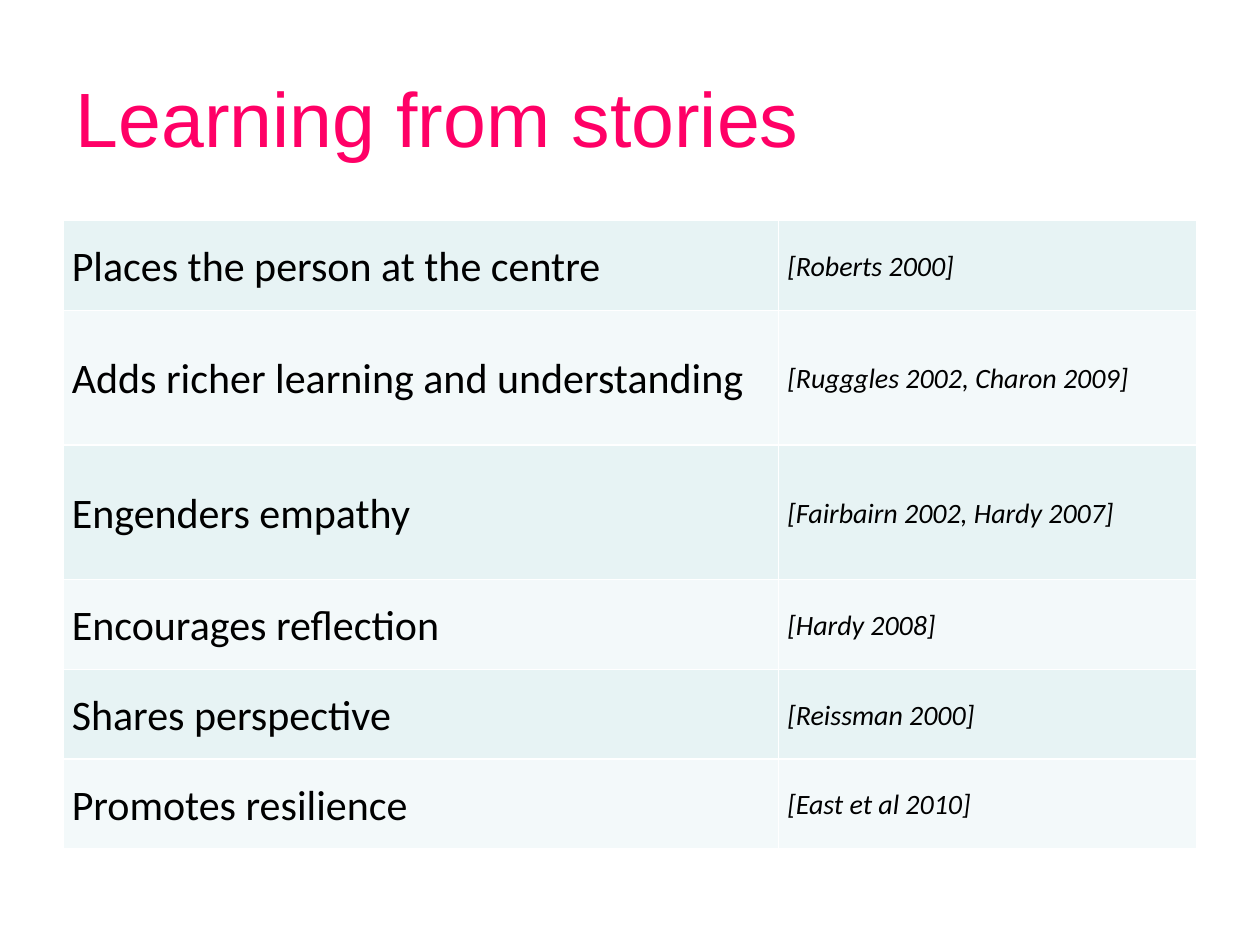
from lxml.etree import SubElement
from pptx import Presentation
from pptx.dml.color import RGBColor
from pptx.enum.text import MSO_ANCHOR, PP_ALIGN
from pptx.oxml.ns import qn
from pptx.util import Inches, Pt


def set_font(p, name, size, color, italic=False):
    p.alignment = PP_ALIGN.LEFT
    p.font.name = name
    p.font.size = Pt(size)
    p.font.bold = False
    p.font.italic = italic
    p.font.color.rgb = RGBColor.from_string(color)


def set_borders(cell, color, width):
    tc_pr = cell._tc.get_or_add_tcPr()
    for side in ("a:lnL", "a:lnR", "a:lnT", "a:lnB"):
        ln = SubElement(tc_pr, qn(side), w=str(Pt(width)))
        SubElement(SubElement(ln, qn("a:solidFill")), qn("a:srgbClr"), val=color)


prs = Presentation()
prs.slide_width, prs.slide_height = Inches(10), Inches(7.5)
W, H = prs.slide_width, prs.slide_height
s = prs.slides.add_slide(prs.slide_layouts[5])
margin, content_w = int(W * 0.05), int(W * 0.9)

title = s.shapes.title
title.left, title.top, title.width, title.height = margin, int(H * 0.04), content_w, Inches(1.25)
tf = title.text_frame
tf.text = "Learning from stories"
tf.vertical_anchor = MSO_ANCHOR.MIDDLE
set_font(tf.paragraphs[0], "Arial", 44, "FF0066")

benefits = [
    ("Places the person at the centre", "[Roberts 2000]", 2),
    ("Adds richer learning and understanding", "[Rugggles 2002, Charon 2009]", 3),
    ("Engenders empathy", "[Fairbairn 2002, Hardy 2007]", 3),
    ("Encourages reflection", "[Hardy 2008]", 2),
    ("Shares perspective", "[Reissman 2000]", 2),
    ("Promotes resilience", "[East et al 2010]", 2),
]
line_h = Inches(4.99) // sum(lines for _, _, lines in benefits)

table = s.shapes.add_table(len(benefits), 2, margin, Inches(1.75), content_w, Inches(4.99)).table
table.first_row = False
table.columns[0].width = Inches(5.68)
table.columns[1].width = content_w - Inches(5.68)

for i, (benefit, reference, lines) in enumerate(benefits):
    table.rows[i].height = line_h * lines
    for j, (text, size) in enumerate([(benefit, 24), (reference, 16)]):
        cell = table.cell(i, j)
        cell.text = text
        cell.vertical_anchor = MSO_ANCHOR.MIDDLE
        cell.margin_left = cell.margin_right = Inches(0.07)
        cell.margin_top = cell.margin_bottom = 0
        set_borders(cell, "FFFFFF", 1)
        cell.fill.solid()
        cell.fill.fore_color.rgb = RGBColor.from_string(("E7F3F4", "F3F9FA")[i % 2])
        p = cell.text_frame.paragraphs[0]
        p.line_spacing = 1.07
        set_font(p, "Calibri", size, "000000", italic=j == 1)

prs.save("out.pptx")
